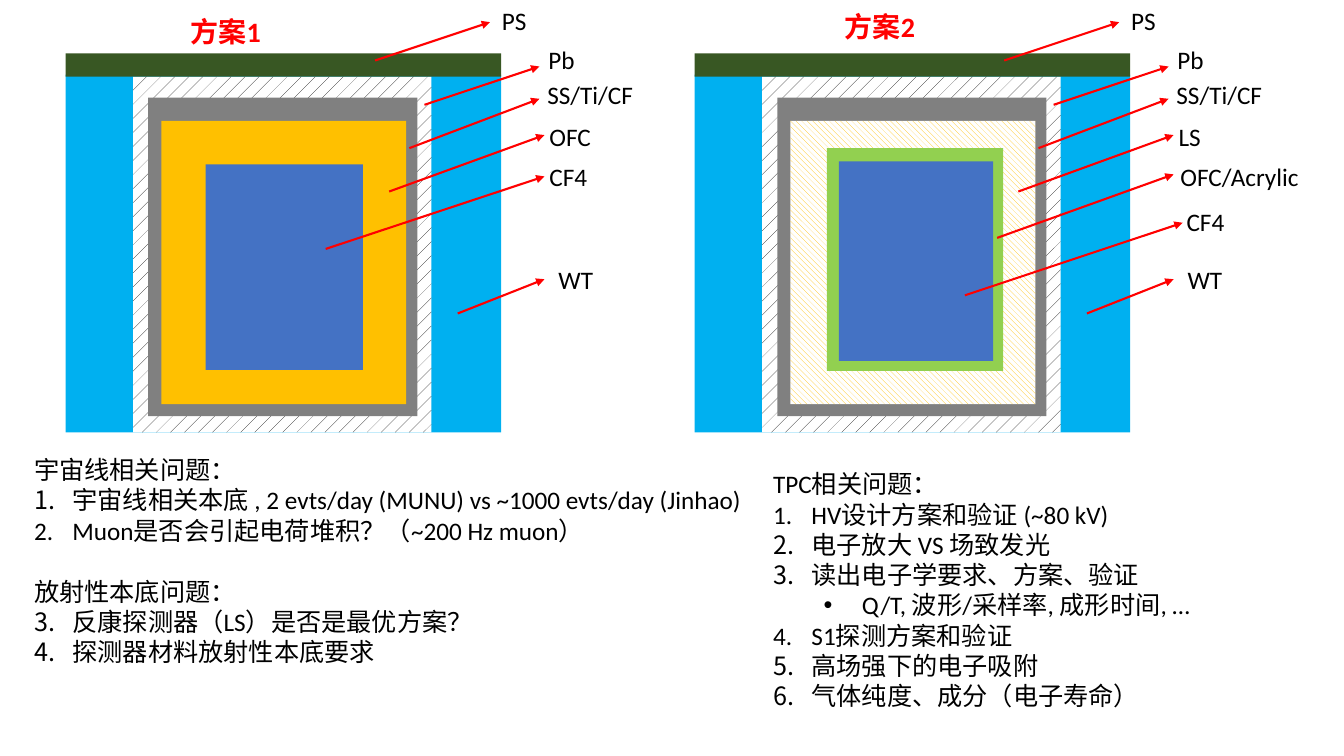
from lxml.etree import SubElement
from pptx import Presentation
from pptx.dml.color import RGBColor
from pptx.enum.dml import MSO_PATTERN
from pptx.enum.shapes import MSO_CONNECTOR, MSO_SHAPE
from pptx.enum.text import MSO_AUTO_SIZE
from pptx.oxml.ns import qn
from pptx.util import Pt

PX = 9144  # EMU in one px, 100 px to the inch
FONT = "Calibri"
BLACK = RGBColor(0x00, 0x00, 0x00)
WHITE = RGBColor(0xFF, 0xFF, 0xFF)
RED = RGBColor(0xFF, 0x00, 0x00)
WATER = RGBColor(0x00, 0xB0, 0xF0)
NEAR_BLACK = RGBColor(0x0D, 0x0D, 0x0D)
GREY = RGBColor(0x80, 0x80, 0x80)
AMBER = RGBColor(0xFF, 0xC0, 0x00)
LIME = RGBColor(0x92, 0xD0, 0x50)
BLUE = RGBColor(0x44, 0x72, 0xC4)
DARK_GREEN = RGBColor(0x38, 0x57, 0x23)
DOTS = MSO_PATTERN.PERCENT_5
STRIPES = MSO_PATTERN.WIDE_DOWNWARD_DIAGONAL

# Content. Both schemes are measured from the first one's place.
SCHEME_STEP = 624
# Layers: left, top, width, height, colour, pattern
SHARED_LAYERS = [
    (65, 74, 432, 355, WATER, None),
    (132, 76, 296, 353, NEAR_BLACK, DOTS),
    (147, 97, 267, 316, GREY, None),
    (65, 53, 432, 23, DARK_GREEN, None),
]
# Labels: text, left, top, width, arrow start, arrow end
SHARED_LABELS = [
    ("PS", 488, 0, 91, (372, 60), (486, 22)),
    ("Pb", 534, 39, 91, (421, 104), (535, 66)),
    ("SS/Ti/CF", 533, 74, 113, (406, 147), (535, 98)),
    ("WT", 544, 257, 91, (454, 311), (540, 277)),
]
SCHEMES = [
    {
        "title": ("方案1", 179, 9),
        "layers": [
            (160, 120, 243, 281, AMBER, None),
            (204, 163, 156, 204, BLUE, None),
        ],
        "labels": [
            ("OFC", 535, 115, 151, (386, 190), (540, 134)),
            ("CF4", 535, 155, 151, (323, 247), (540, 175)),
        ],
    },
    {
        "title": ("方案2", 204, 5),
        "layers": [
            (160, 120, 243, 281, AMBER, STRIPES),
            (196, 147, 175, 221, LIME, None),
            (208, 160, 153, 198, BLUE, None),
        ],
        "labels": [
            ("LS", 535, 115, 151, (386, 190), (540, 134)),
            ("OFC/Acrylic", 537, 155, 151, (365, 236), (540, 173)),
            ("CF4", 543, 200, 151, (333, 293), (549, 221)),
        ],
    },
]

# Questions: a heading has no mark, a number N counts on from N, "•" is a sub-item
TPC_QUESTIONS = [
    ("TPC相关问题：", None),
    ("HV设计方案和验证 (~80 kV)", 1),
    ("电子放大 VS 场致发光", 1),
    ("读出电子学要求、方案、验证", 1),
    ("Q/T, 波形/采样率, 成形时间, …", "•"),
    ("S1探测方案和验证", 1),
    ("高场强下的电子吸附", 1),
    ("气体纯度、成分（电子寿命）", 1),
]
BACKGROUND_QUESTIONS = [
    ("宇宙线相关问题：", None),
    ("宇宙线相关本底 , 2 evts/day (MUNU) vs ~1000 evts/day (Jinhao)", 1),
    ("Muon是否会引起电荷堆积？（~200 Hz muon）", 1),
    ("放射性本底问题：", None),
    ("反康探测器（LS）是否是最优方案？", 3),
    ("探测器材料放射性本底要求", 3),
]


def add_mark(para, mark):
    properties = para._p.get_or_add_pPr()
    para.level = 1 if mark == "•" else 0
    properties.set("marL", str((88 if mark == "•" else 38) * PX))
    properties.set("indent", str(-38 * PX))
    if mark == "•":
        SubElement(properties, qn("a:buFont"), typeface="Arial")
        SubElement(properties, qn("a:buChar"), char=mark)
    else:
        SubElement(properties, qn("a:buFont"), typeface="+mj-lt")
        SubElement(properties, qn("a:buAutoNum"), type="arabicPeriod", startAt=str(mark))


def add_text(page, lines, left, top, width, height=40, size=18, color=BLACK, bold=False):
    box = page.shapes.add_textbox(left * PX, top * PX, width * PX, height * PX)
    frame = box.text_frame
    frame.word_wrap = True
    frame.auto_size = MSO_AUTO_SIZE.SHAPE_TO_FIT_TEXT
    for index, (text, mark) in enumerate(lines):
        para = frame.paragraphs[0] if index == 0 else frame.add_paragraph()
        if mark:
            add_mark(para, mark)
        elif index:
            para.space_before = Pt(22)  # one line above a later heading
        span = para.add_run()
        span.text = text
        span.font.name = FONT
        span.font.size = Pt(size)
        span.font.bold = bold
        span.font.color.rgb = color


def add_layer(page, left, top, width, height, color, pattern):
    layer = page.shapes.add_shape(
        MSO_SHAPE.RECTANGLE, left * PX, top * PX, width * PX, height * PX)
    layer.shadow.inherit = False
    layer.line.fill.background()
    if pattern is None:
        layer.fill.solid()
        layer.fill.fore_color.rgb = color
    else:
        layer.fill.patterned()
        layer.fill.pattern = pattern
        layer.fill.fore_color.rgb = color
        layer.fill.back_color.rgb = WHITE


def add_arrow(page, shift, start, end):
    arrow = page.shapes.add_connector(
        MSO_CONNECTOR.STRAIGHT,
        (start[0] + shift) * PX, start[1] * PX, (end[0] + shift) * PX, end[1] * PX)
    arrow.line.color.rgb = RED
    arrow.line.width = Pt(1.5)
    SubElement(arrow.line._get_or_add_ln(), qn("a:tailEnd"), type="triangle")
    SubElement(arrow._element.spPr, qn("a:effectLst"))


def main():
    deck = Presentation()
    deck.slide_width, deck.slide_height = 1333 * PX, 750 * PX
    page = deck.slides.add_slide(deck.slide_layouts[6])

    # Detector schemes
    for number, scheme in enumerate(SCHEMES):
        shift = number * SCHEME_STEP
        for left, *rest in SHARED_LAYERS + scheme["layers"]:
            add_layer(page, left + shift, *rest)
        for text, left, top, width, start, end in SHARED_LABELS + scheme["labels"]:
            add_arrow(page, shift, start, end)
            add_text(page, [(text, None)], left + shift, top, width)
        title, left, top = scheme["title"]
        add_text(page, [(title, None)], left + shift, top, 129, height=44,
                 size=20, color=RED, bold=True)

    # Open questions
    add_text(page, TPC_QUESTIONS, 757, 460, 562, height=283)
    add_text(page, BACKGROUND_QUESTIONS, 24, 446, 753, height=252)

    deck.save("out.pptx")


if __name__ == "__main__":
    main()
